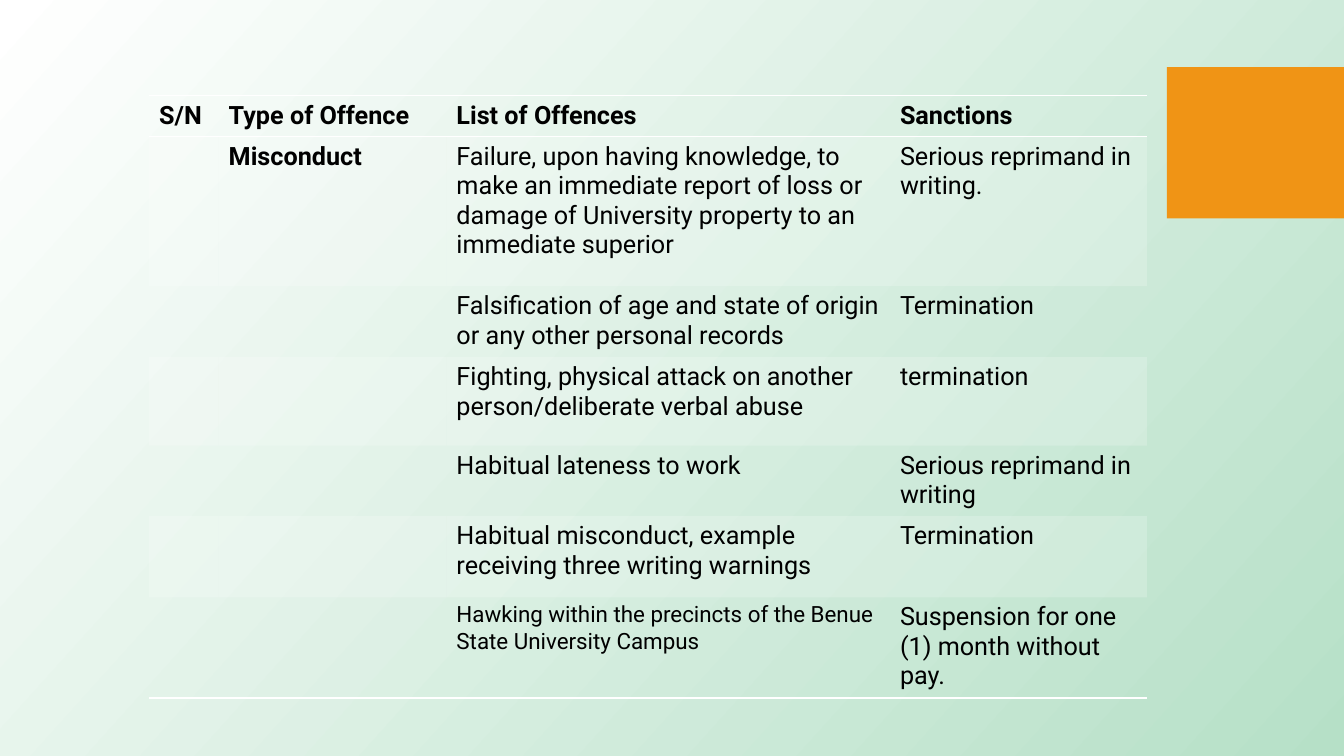
from lxml import etree
from pptx import Presentation
from pptx.dml.color import RGBColor
from pptx.enum.shapes import MSO_SHAPE
from pptx.oxml.ns import qn
from pptx.util import Pt

RECTANGLE = MSO_SHAPE.RECTANGLE
BLANK_LAYOUT = 6
NO_GRID_STYLE = "{2D5ABB26-0587-4C30-8999-92F81FD0307C}"
COLORS = {"white": "FFFFFF", "mint": "B6E0C7", "orange": "F09415", "text": "000000"}

COLUMN_WIDTHS = [49.7, 162.7, 316.8, 183.6]
ROW_HEIGHTS = [29.3, 106.8, 50.7, 63.2, 50.4, 57.9, 72]
OFFENCES = [
    ["S/N", "Type of Offence", "List of Offences", "Sanctions"],
    ["", "Misconduct",
     "Failure, upon having knowledge, to make an immediate report of loss or "
     "damage of University property to an immediate superior",
     "Serious reprimand in writing."],
    ["", "", "Falsification of age and state of origin or any other personal records",
     "Termination"],
    ["", "", "Fighting, physical attack on another person/deliberate verbal abuse",
     "termination"],
    ["", "", "Habitual lateness to work", "Serious reprimand in writing"],
    ["", "", "Habitual misconduct, example receiving three writing warnings",
     "Termination"],
    ["", "", "Hawking within the precincts of the Benue State University Campus",
     "Suspension for one (1) month without pay."],
]
SMALL_CELL = (6, 2)


class SlideBuilder:
    """Holds the style and the current slide."""

    font_name = "Roboto"
    font_size = 18
    small_size = 16

    def __init__(self, slide):
        self.slide = slide

    def color(self, name):
        return RGBColor.from_string(COLORS[name])

    def background(self, start, end, angle):
        fill = self.slide.background.fill
        fill.gradient()
        fill.gradient_angle = 360 - angle
        for stop, name in zip(fill.gradient_stops, (start, end)):
            stop.color.rgb = self.color(name)

    def block(self, left, top, width, height, color):
        shape = self.slide.shapes.add_shape(
            RECTANGLE, Pt(left), Pt(top), Pt(width), Pt(height))
        shape.shadow.inherit = False
        shape.fill.solid()
        shape.fill.fore_color.rgb = self.color(color)
        shape.line.fill.background()

    def border(self, cell, side):
        line = etree.Element(qn(f"a:ln{side}"), w=str(Pt(1)))
        solid = etree.SubElement(line, qn("a:solidFill"))
        etree.SubElement(solid, qn("a:srgbClr"), val=COLORS["white"])
        properties = cell._tc.get_or_add_tcPr()
        # Border lines come before the fill, top before bottom
        properties.insert(len(properties) - 1, line)

    def cell_fill(self, cell, banded):
        if not banded:
            cell.fill.background()
            return
        cell.fill.solid()
        cell.fill.fore_color.rgb = self.color("white")
        color = cell._tc.tcPr.find(".//" + qn("a:srgbClr"))
        etree.SubElement(color, qn("a:alpha"), val="20000")

    def cell_text(self, cell, text, size, bold):
        cell.text = text
        font = cell.text_frame.paragraphs[0].font
        font.name = self.font_name
        font.size = Pt(size)
        font.bold = bold
        font.color.rgb = self.color("text")

    def table(self, left, top, widths, heights, rows):
        frame = self.slide.shapes.add_table(
            len(rows), len(widths), Pt(left), Pt(top), Pt(sum(widths)), Pt(sum(heights)))
        table = frame.table
        table.horz_banding = False
        table._tbl.tblPr.find(qn("a:tableStyleId")).text = NO_GRID_STYLE
        for column, width in zip(table.columns, widths):
            column.width = Pt(width)
        for row, height in zip(table.rows, heights):
            row.height = Pt(height)

        last = len(rows) - 1
        for row_index, texts in enumerate(rows):
            for column_index, text in enumerate(texts):
                cell = table.cell(row_index, column_index)
                small = (row_index, column_index) == SMALL_CELL
                size = self.small_size if small else self.font_size
                self.cell_text(cell, text, size, row_index == 0 or column_index < 2)
                self.cell_fill(cell, row_index % 2 == 1)
                if row_index == 0:
                    self.border(cell, "T")
                if row_index in (0, last):
                    self.border(cell, "B")


def main():
    presentation = Presentation()
    presentation.slide_width = Pt(960)
    presentation.slide_height = Pt(540)
    layout = presentation.slide_layouts[BLANK_LAYOUT]
    builder = SlideBuilder(presentation.slides.add_slide(layout))

    # Backdrop and side block
    builder.background("white", "mint", 42)
    builder.block(833.5, 48, 126.5, 108, "orange")

    # Offences and sanctions
    builder.table(106.5, 68.4, COLUMN_WIDTHS, ROW_HEIGHTS, OFFENCES)

    presentation.save("out.pptx")


if __name__ == "__main__":
    main()
